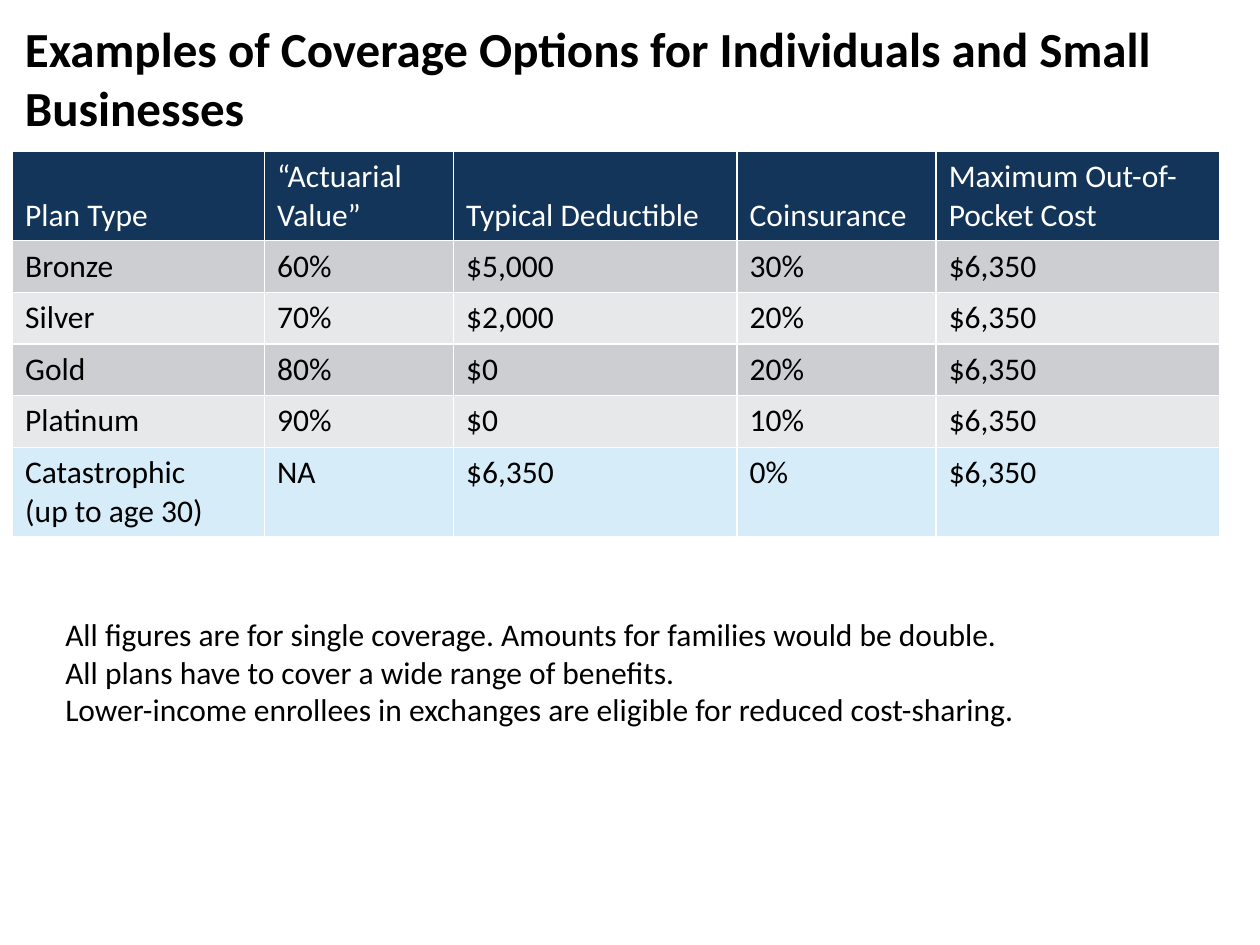
from dataclasses import dataclass

from pptx import Presentation
from pptx.dml.color import RGBColor
from pptx.enum.text import MSO_ANCHOR
from pptx.util import Inches, Pt

TOP, BOTTOM = MSO_ANCHOR.TOP, MSO_ANCHOR.BOTTOM


@dataclass(frozen=True)
class Theme:
    font: str = "Calibri"
    title_size: int = 28
    body_size: int = 18
    black: str = "000000"
    white: str = "FFFFFF"
    header: str = "133559"
    dark_band: str = "CCCED1"
    light_band: str = "E7E8EA"
    highlight: str = "D6EDF9"


theme = Theme()


def write_text(frame, text, size=theme.body_size, color=theme.black, bold=False):
    """Fill a text frame, one paragraph per line of text."""
    frame.word_wrap = True
    frame.text = text
    for paragraph in frame.paragraphs:
        for run in paragraph.runs:
            run.font.name = theme.font
            run.font.size = Pt(size)
            run.font.bold = bold
            run.font.color.rgb = RGBColor.from_string(color)


presentation = Presentation()
presentation.slide_width = Inches(10)
presentation.slide_height = Inches(7.5)
slide = presentation.slides.add_slide(presentation.slide_layouts[6])

# Plan comparison table
plans = [
    ["Plan Type", "“Actuarial Value”", "Typical Deductible", "Coinsurance",
     "Maximum Out-of-Pocket Cost"],
    ["Bronze", "60%", "$5,000", "30%", "$6,350"],
    ["Silver", "70%", "$2,000", "20%", "$6,350"],
    ["Gold", "80%", "$0", "20%", "$6,350"],
    ["Platinum", "90%", "$0", "10%", "$6,350"],
    ["Catastrophic\n(up to age 30)", "NA", "$6,350", "0%", "$6,350"],
]
column_widths = [2, 1.5, 2.25, 1.58, 2.25]
row_heights = [0.7, 0.41, 0.41, 0.41, 0.41, 0.7]
row_fills = [theme.header, *[theme.dark_band, theme.light_band] * 2, theme.highlight]

table = slide.shapes.add_table(
    len(plans), len(column_widths), Inches(0.1), Inches(1.2),
    Inches(sum(column_widths)), Inches(sum(row_heights))).table
for column, width in zip(table.columns, column_widths):
    column.width = Inches(width)
for row, height, fill, values in zip(table.rows, row_heights, row_fills, plans):
    row.height = Inches(height)
    is_header = fill == theme.header
    for cell, value in zip(row.cells, values):
        cell.fill.solid()
        cell.fill.fore_color.rgb = RGBColor.from_string(fill)
        cell.vertical_anchor = BOTTOM if is_header else TOP
        write_text(cell.text_frame, value,
                   color=theme.white if is_header else theme.black)

# Title and notes under the table
title = slide.shapes.add_textbox(Inches(0.1), Inches(0.1), Inches(9.8), Inches(1))
write_text(title.text_frame,
           "Examples of Coverage Options for Individuals and Small Businesses",
           size=theme.title_size, bold=True)

remarks = slide.shapes.add_textbox(Inches(0.42), Inches(4.83), Inches(9.17), Inches(1.01))
write_text(remarks.text_frame, "\n".join([
    "All figures are for single coverage. Amounts for families would be double.",
    "All plans have to cover a wide range of benefits.",
    "Lower-income enrollees in exchanges are eligible for reduced cost-sharing.",
]))

presentation.save("out.pptx")
